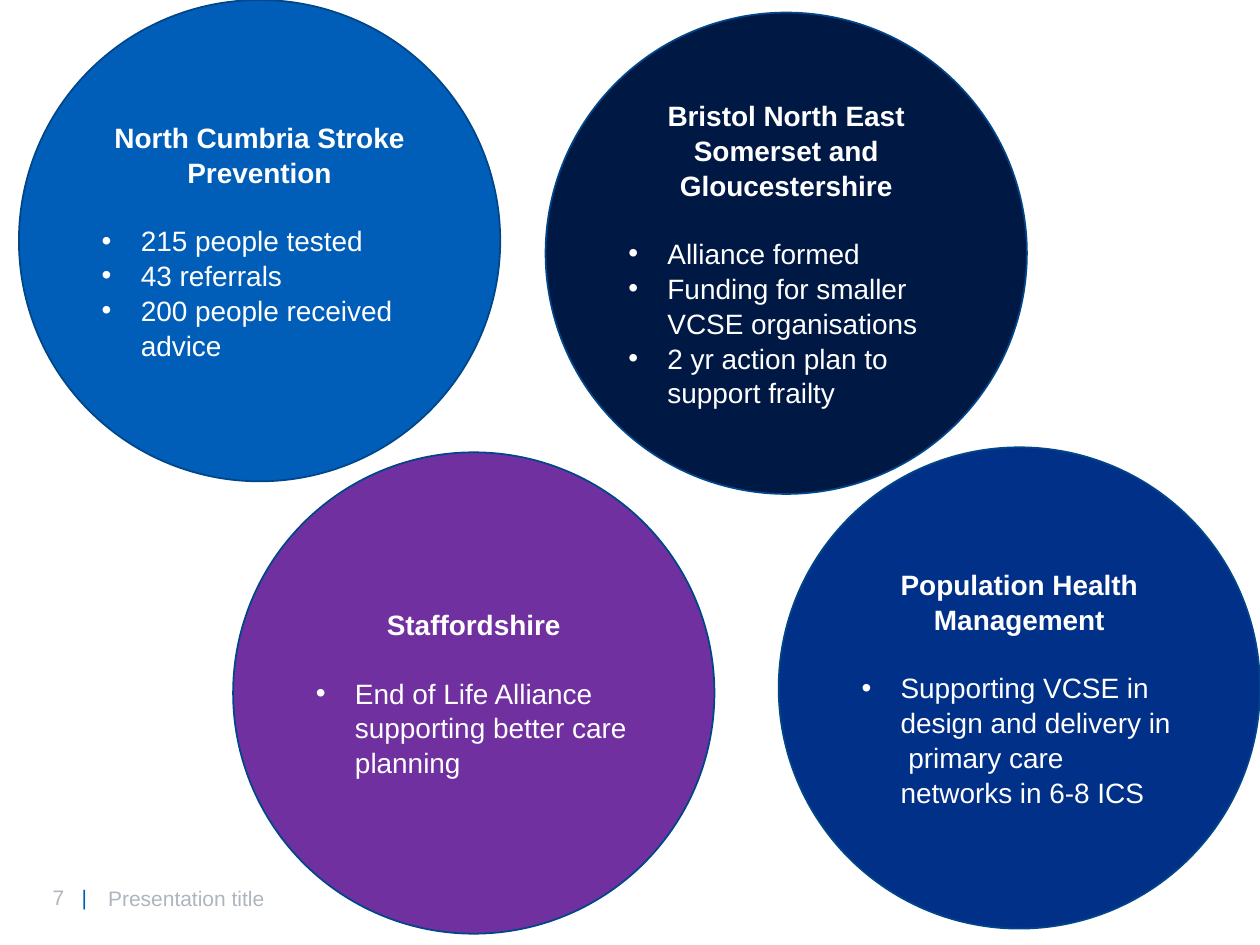
from lxml import etree
from pptx import Presentation
from pptx.dml.color import RGBColor
from pptx.enum import shapes, text
from pptx.oxml import ns
from pptx.util import Inches, Pt

GREY, BLUE, WHITE, OUTLINE = "ADB6BE", "005EB8", "FFFFFF", "004688"
DIAMETER = Inches(3.82)
HANGING = Inches(0.31)


def color(value):
    return RGBColor.from_string(value)


def style(run, size, value, bold=False):
    run.font.name = "Arial"
    run.font.size = Pt(size)
    run.font.bold = bold
    run.font.color.rgb = color(value)


prs = Presentation()
prs.slide_width, prs.slide_height = Inches(10), Inches(7.5)
slide = prs.slides.add_slide(prs.slide_layouts[6])

# Footer: page number with a blue bar, then the presentation title
page_number = slide.shapes.add_textbox(Inches(0.32), Inches(6.97), Inches(0.71), Inches(0.3))
number_line = page_number.text_frame.paragraphs[0]
for words, value in (("7\t", GREY), ("|", BLUE)):
    run = number_line.add_run()
    run.text = words
    style(run, 12, value)
tabs = etree.SubElement(number_line._p.get_or_add_pPr(), ns.qn("a:tabLst"))
etree.SubElement(tabs, ns.qn("a:tab"), pos=str(Inches(0.23)), algn="l")

footer = slide.shapes.add_textbox(Inches(0.76), Inches(6.93), Inches(6.26), Inches(0.4))
footer.text_frame.word_wrap = True
footer.text_frame.vertical_anchor = text.MSO_ANCHOR.MIDDLE
footer.text_frame.text = "Presentation title"
style(footer.text_frame.paragraphs[0].runs[0], 12, GREY)

# Project circles: left, top, fill, heading, bullets
projects = [
    (0.15, 0, BLUE, "North Cumbria Stroke Prevention",
     ["215 people tested", "43 referrals", "200 people received advice"]),
    (6.18, 3.55, "003087", "Population Health Management",
     ["Supporting VCSE in design and delivery in  primary care networks in 6-8 ICS"]),
    (4.33, 0.1, "001844", "Bristol North East Somerset and Gloucestershire",
     ["Alliance formed", "Funding for smaller VCSE organisations",
      "2 yr action plan to support frailty"]),
    (1.85, 3.59, "7030A0", "Staffordshire",
     ["End of Life Alliance supporting better care planning"]),
]
for left, top, fill, heading, bullets in projects:
    circle = slide.shapes.add_shape(
        shapes.MSO_SHAPE.OVAL, Inches(left), Inches(top), DIAMETER, DIAMETER)
    circle.shadow.inherit = False
    circle.fill.solid()
    circle.fill.fore_color.rgb = color(fill)
    circle.line.color.rgb = color(OUTLINE)
    circle.line.width = Pt(1)

    frame = circle.text_frame
    frame.word_wrap = True
    frame.vertical_anchor = text.MSO_ANCHOR.MIDDLE
    frame.text = "\n".join([heading, *bullets])
    for index, paragraph in enumerate(frame.paragraphs):
        is_heading = index == 0
        paragraph.line_spacing = 1.04
        style(paragraph.runs[0], 16, WHITE, bold=is_heading)
        if is_heading:
            paragraph.alignment = text.PP_ALIGN.CENTER
            paragraph.space_after = Pt(19)
        else:
            paragraph.alignment = text.PP_ALIGN.LEFT
            props = paragraph._p.get_or_add_pPr()
            props.set("marL", str(HANGING))
            props.set("indent", str(-HANGING))
            etree.SubElement(props, ns.qn("a:buFont"), typeface="Arial")
            etree.SubElement(props, ns.qn("a:buChar"), char="•")

prs.save("out.pptx")
